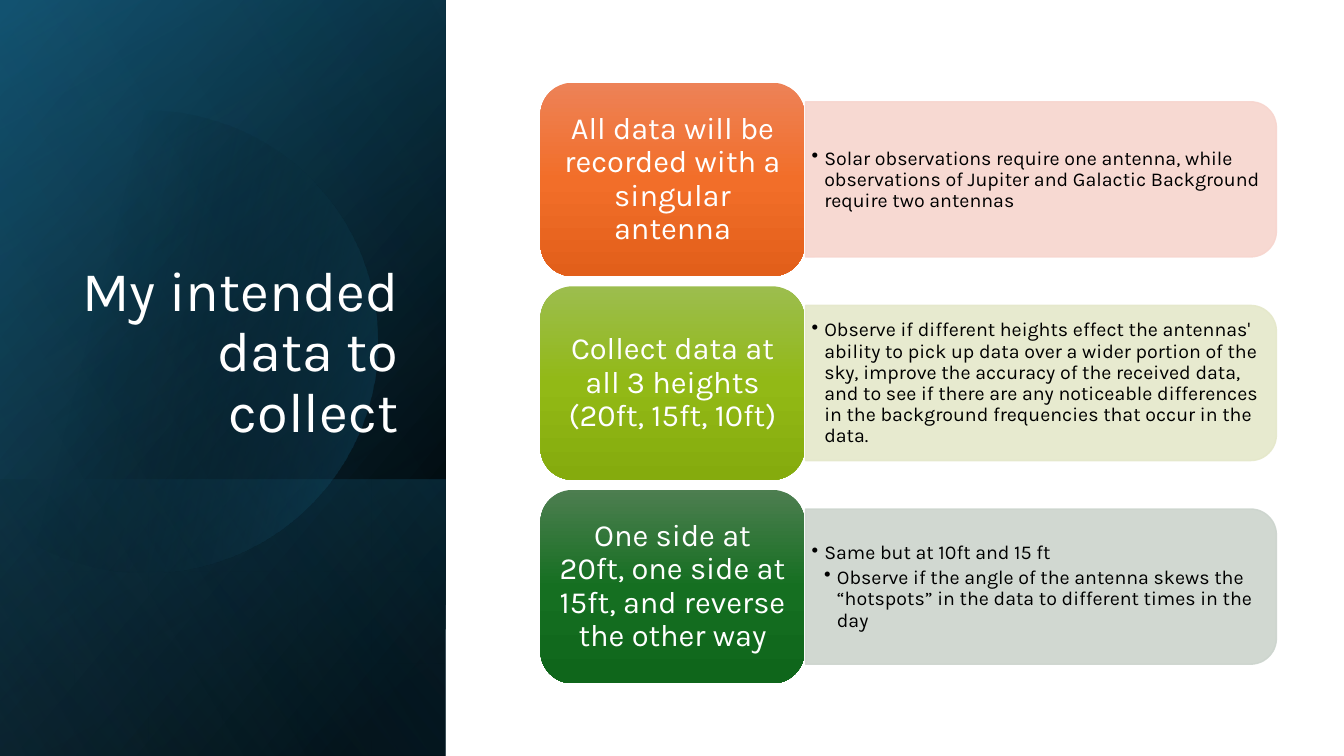
from dataclasses import dataclass
from math import cos, radians, sin

from pptx import Presentation
from pptx.dml.color import RGBColor
from pptx.enum.shapes import MSO_SHAPE as SHAPE
from pptx.enum.text import MSO_ANCHOR as ANCHOR, MSO_AUTO_SIZE as AUTO, PP_ALIGN as ALIGN
from pptx.oxml import parse_xml
from pptx.oxml.ns import nsdecls, qn
from pptx.oxml.xmlchemy import OxmlElement
from pptx.util import Inches, Pt


@dataclass(frozen=True)
class Theme:
    font: str = "Karla"
    light: RGBColor = RGBColor(255, 255, 255)
    dark: RGBColor = RGBColor(0, 0, 0)
    black: str = "000000"
    navy: str = "104862"
    teal: str = "156082"
    sky: str = "46B1E1"
    orange: tuple = ("ED8257", "F26E29", "E25F1A", "F7D5CE")
    lime: tuple = ("9CBD4E", "92B916", "85AB0D", "E5E8CA")
    green: tuple = ("4D7E50", "156F21", "0F661B", "CCD4CD")
    title: Pt = Pt(40)
    heading: Pt = Pt(22)
    body: Pt = Pt(14)


T = Theme()


def quarter_turned(kind, x, y, w, h):
    """Add a shape turned by 90 degrees that covers the box x, y, w, h."""
    sp = s.shapes.add_shape(kind, Inches(x + (w - h) / 2), Inches(y + (h - w) / 2),
                            Inches(h), Inches(w))
    sp.rotation = 90
    sp.shadow.inherit = False
    return sp


def fill_gradient(sp, stops, angle):
    """Fill with (position %, colour, opacity %) stops and no outline."""
    gs = "".join(f'<a:gs pos="{pos * 1000}"><a:srgbClr val="{color}">'
                 f'<a:alpha val="{alpha * 1000}"/></a:srgbClr></a:gs>'
                 for pos, color, alpha in stops)
    sp.shadow.inherit = False
    sp.line.fill.background()
    sp.fill.background()
    spPr = sp._element.spPr
    spPr.replace(spPr.find(qn("a:noFill")), parse_xml(
        f'<a:gradFill {nsdecls("a")} rotWithShape="1"><a:gsLst>{gs}</a:gsLst>'
        f'<a:lin ang="{angle * 60000}" scaled="0"/></a:gradFill>'))


prs = Presentation()
prs.slide_width, prs.slide_height = Inches(13.33), Inches(7.5)
s = prs.slides.add_slide(prs.slide_layouts[5])
title = s.shapes.title

# Dark side panel: layered gradients, with a disc under the last one
PANEL_W = 4.42
layers = [
    (0, 7.5, [(8, T.black, 100), (100, T.navy, 100)], 50),
    (0, 7.5, [(0, T.black, 0), (99, T.teal, 46)], 30),
    (4.76, 2.74, [(2, T.teal, 29), (100, T.black, 30)], 130),
    (0, 7.5, [(0, T.black, 0), (99, T.sky, 11)], 120),
]
for i, (y, h, stops, angle) in enumerate(layers):
    if i == len(layers) - 1:
        cx, cy, radius = 1.45, 3.39, 2.29
        arc = [(Inches(cx + radius * cos(radians(a))), Inches(cy + radius * sin(radians(a))))
               for a in range(-129, 130, 3)]
        outline = s.shapes.build_freeform(*arc[0])
        outline.add_line_segments(arc[1:])
        fill_gradient(outline.convert_to_shape(), [(29, T.black, 0), (100, T.teal, 43)], 14)
    layer = quarter_turned(SHAPE.RECTANGLE, 0, y, PANEL_W, h)
    layer._element.spPr.get_or_add_xfrm().set("flipH", "1")
    fill_gradient(layer, stops, angle)

# Title, brought in front of the panel
s.shapes._spTree.append(title._element)
title.left, title.top, title.width, title.height = map(Inches, (0.64, 1.84, 3.41, 2.62))
tf = title.text_frame
tf.text = "My intended data to collect"
tf.word_wrap, tf.auto_size, tf.vertical_anchor = True, AUTO.NONE, ANCHOR.BOTTOM
p = tf.paragraphs[0]
p.alignment, p.line_spacing = ALIGN.RIGHT, 0.9
font = p.runs[0].font
font.name, font.size, font.color.rgb = T.font, T.title, T.light

# Rows: a coloured card on the left, its details in a pale bar on the right
rows = [
    (T.orange, "All data will be recorded with a singular antenna",
     ["Solar observations require one antenna, while observations of Jupiter and "
      "Galactic Background require two antennas"]),
    (T.lime, "Collect data at all 3 heights (20ft, 15ft, 10ft)",
     ["Observe if different heights effect the antennas' ability to pick up data over a "
      "wider portion of the sky, improve the accuracy of the received data, and to see if "
      "there are any noticeable differences in the background frequencies that occur in "
      "the data."]),
    (T.green, "One side at 20ft, one side at 15ft, and reverse the other way",
     ["Same but at 10ft and 15 ft",
      "Observe if the angle of the antenna skews the “hotspots” in the data to different "
      "times in the day"]),
]
TOP, PITCH = 0.82, 2.02
CARD_X, CARD_W, CARD_H = 5.36, 2.62, 1.92
BAR_X, BAR_W, BAR_H = 7.99, 4.67, 1.54

for i, ((*card_colors, pale), heading, details) in enumerate(rows):
    y = TOP + i * PITCH

    bar = quarter_turned(SHAPE.ROUND_2_SAME_RECTANGLE, BAR_X, y + (CARD_H - BAR_H) / 2,
                         BAR_W, BAR_H)
    bar.fill.solid()
    bar.fill.fore_color.rgb = bar.line.color.rgb = RGBColor.from_string(pale)
    bar.line.width = Pt(1)
    for color in bar._element.spPr.iter(qn("a:srgbClr")):
        alpha = OxmlElement("a:alpha")
        alpha.set("val", "90000")
        color.append(alpha)

    box = s.shapes.add_textbox(Inches(BAR_X), Inches(y + 0.27), Inches(4.59), Inches(1.39))
    tf = box.text_frame
    tf.text = "\n".join(details)
    tf.word_wrap, tf.vertical_anchor = True, ANCHOR.MIDDLE
    tf.margin_left = tf.margin_right = Inches(0.06)
    tf.margin_top = tf.margin_bottom = Inches(0.03)
    for level, p in enumerate(tf.paragraphs, 1):
        p.level, p.line_spacing, p.space_after = level, 0.9, Pt(2.5)
        pPr = p._p.get_or_add_pPr()
        pPr.set("marL", str(Inches(0.125 * level)))
        pPr.set("indent", str(Inches(-0.125)))
        bullet = OxmlElement("a:buChar")
        bullet.set("char", "•")
        pPr.append(bullet)
        font = p.runs[0].font
        font.name, font.size, font.color.rgb = T.font, T.body, T.dark

    card = s.shapes.add_shape(SHAPE.ROUNDED_RECTANGLE, Inches(CARD_X), Inches(y),
                              Inches(CARD_W), Inches(CARD_H))
    fill_gradient(card, [(50 * k, color, 100) for k, color in enumerate(card_colors)], 90)
    tf = card.text_frame
    tf.text = heading
    tf.word_wrap, tf.vertical_anchor = True, ANCHOR.MIDDLE
    tf.margin_left = tf.margin_right = Inches(0.09)
    tf.margin_top = tf.margin_bottom = Inches(0.05)
    p = tf.paragraphs[0]
    p.alignment, p.line_spacing = ALIGN.CENTER, 0.9
    font = p.runs[0].font
    font.name, font.size, font.color.rgb = T.font, T.heading, T.light

prs.save("out.pptx")
